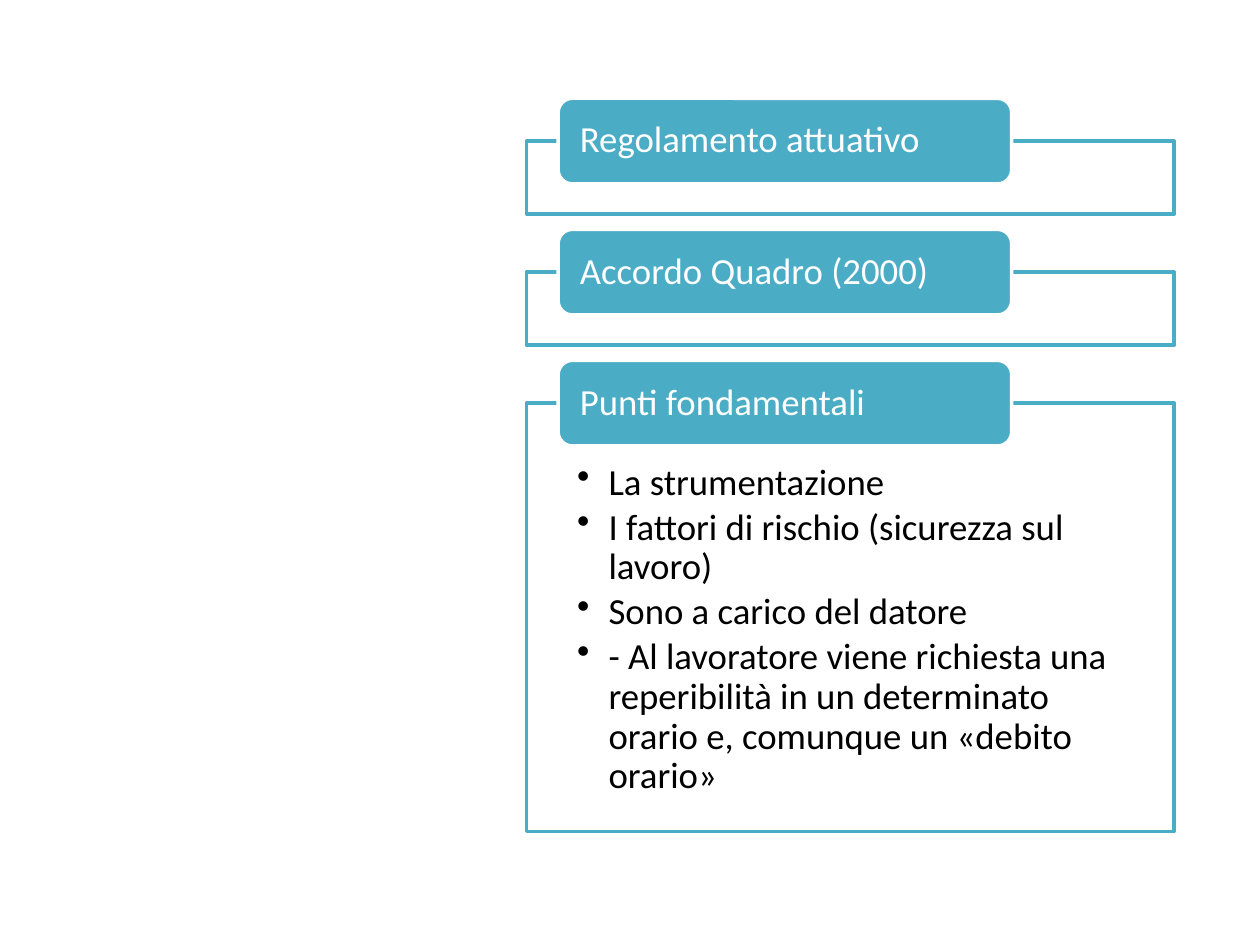
"""Build a slide of three titled frames, the last with a bulleted list."""
import pptx
import pptx.util
import pptx.dml.color
import pptx.enum.shapes
import pptx.enum.text
import pptx.oxml.ns
import lxml.etree

PARTS = [
    ("Regolamento attuativo", []),
    ("Accordo Quadro (2000)", []),
    ("Punti fondamentali", [
        "La strumentazione",
        "I fattori di rischio (sicurezza sul lavoro)",
        "Sono a carico del datore",
        "- Al lavoratore viene richiesta una reperibilità in un determinato "
        "orario e, comunque un «debito orario»",
    ]),
]
TEAL, WHITE, BLACK = "4BACC6", "FFFFFF", "000000"
WIDE, HIGH = 10, 7.5
LEFT, TOP, STEP = 4.18, 1.12, 1.04
FRAME_W, SHORT, TALL = 5.14, 0.58, 3.4
TAB_W, TAB_H, TAB_IN, TAB_UP = 3.6, 0.68, 0.25, 0.34

SHAPE = pptx.enum.shapes.MSO_SHAPE
ANCHOR = pptx.enum.text.MSO_ANCHOR
ALIGN = pptx.enum.text.PP_ALIGN
inch = pptx.util.Inches
qn = pptx.oxml.ns.qn


def rgb(code):
    """Turn a hex string into a colour."""
    return pptx.dml.color.RGBColor.from_string(code)


def add_box(slide, kind, place, fill, line):
    """Add a filled and outlined shape."""
    box = slide.shapes.add_shape(kind, *map(inch, place))
    box.shadow.inherit = False
    box.fill.solid()
    box.fill.fore_color.rgb = rgb(fill)
    box.line.color.rgb = rgb(line)
    box.line.width = pptx.util.Pt(2)
    return box


def set_text(box, lines, color, insets, anchor, bullet=False):
    """Write paragraphs into a shape."""
    frame = box.text_frame
    frame.word_wrap = True
    frame.vertical_anchor = anchor
    (frame.margin_left, frame.margin_top,
     frame.margin_right, frame.margin_bottom) = map(inch, insets)
    frame.text = "\n".join(lines)
    for para in frame.paragraphs:
        para.alignment = ALIGN.LEFT
        para.line_spacing = 0.9
        if bullet:
            para.space_after = pptx.util.Pt(3)
            props = para._p.get_or_add_pPr()
            props.set("marL", str(inch(0.25)))
            props.set("indent", str(-inch(0.25)))
            lxml.etree.SubElement(props, qn("a:buChar")).set("char", "•")
        for run in para.runs:
            run.font.name = "Calibri"
            run.font.size = pptx.util.Pt(21)
            run.font.color.rgb = rgb(color)


def main():
    """Build and save the slide."""
    deck = pptx.Presentation()
    deck.slide_width, deck.slide_height = inch(WIDE), inch(HIGH)
    slide = deck.slides.add_slide(deck.slide_layouts[6])
    for row, (title, points) in enumerate(PARTS):
        top = TOP + row * STEP
        place = (LEFT, top, FRAME_W, TALL if points else SHORT)
        box = add_box(slide, SHAPE.RECTANGLE, place, WHITE, TEAL)
        if points:
            set_text(box, points, BLACK, (0.4, 0.48, 0.4, 0.16),
                     ANCHOR.TOP, bullet=True)
        place = (LEFT + TAB_IN, top - TAB_UP, TAB_W, TAB_H)
        tab = add_box(slide, SHAPE.ROUNDED_RECTANGLE, place, TEAL, WHITE)
        set_text(tab, [title], WHITE, (0.14, 0, 0.14, 0), ANCHOR.MIDDLE)
    deck.save("out.pptx")


if __name__ == "__main__":
    main()
